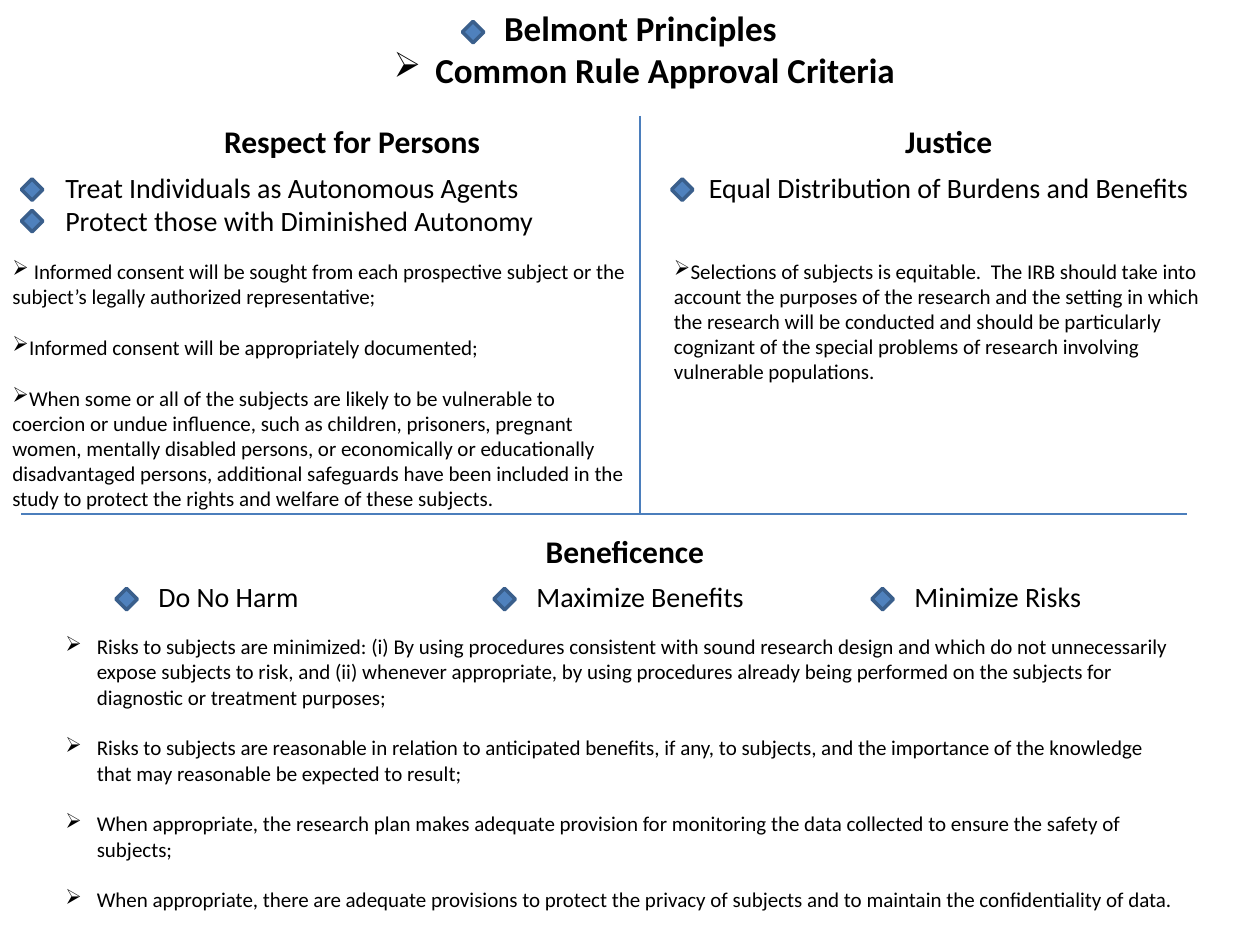
from lxml import etree
from pptx import Presentation
from pptx.dml.color import RGBColor
from pptx.enum.shapes import MSO_CONNECTOR, MSO_SHAPE
from pptx.enum.text import PP_ALIGN
from pptx.oxml.ns import qn
from pptx.util import Inches, Pt

CENTER, LEFT = PP_ALIGN.CENTER, PP_ALIGN.LEFT
DIAMOND, STRAIGHT = MSO_SHAPE.DIAMOND, MSO_CONNECTOR.STRAIGHT
BLACK, BLUE, DARK_BLUE, RULE_BLUE = "000000", "4F81BD", "3A5F8C", "4B7EBC"
FONT = "Calibri"
BLANK_LINE = 14.65  # height of one 12 pt line

RESPECT_CRITERIA = [
    " Informed consent will be sought from each prospective subject or the "
    "subject’s legally authorized representative;",
    "Informed consent will be appropriately documented;",
    "When some or all of the subjects are likely to be vulnerable to coercion "
    "or undue influence, such as children, prisoners, pregnant women, mentally "
    "disabled persons, or economically or educationally disadvantaged persons, "
    "additional safeguards have been included in the study to protect the "
    "rights and welfare of these subjects.",
]
JUSTICE_CRITERIA = [
    "Selections of subjects is equitable.  The IRB should take into account the "
    "purposes of the research and the setting in which the research will be "
    "conducted and should be particularly cognizant of the special problems of "
    "research involving vulnerable populations.",
]
BENEFICENCE_CRITERIA = [
    "Risks to subjects are minimized: (i) By using procedures consistent with "
    "sound research design and which do not unnecessarily expose subjects to "
    "risk, and (ii) whenever appropriate, by using procedures already being "
    "performed on the subjects for diagnostic or treatment purposes;",
    "Risks to subjects are reasonable in relation to anticipated benefits, if "
    "any, to subjects, and the importance of the knowledge that may reasonable "
    "be expected to result;",
    "When appropriate, the research plan makes adequate provision for "
    "monitoring the data collected to ensure the safety of subjects;",
    "When appropriate, there are adequate provisions to protect the privacy of "
    "subjects and to maintain the confidentiality of data.",
]


def color(value):
    return RGBColor.from_string(value)


def add_bullet(p, indent=0):
    """Give a paragraph an arrow bullet with a hanging indent in inches."""
    pPr = p._p.get_or_add_pPr()
    pPr.set("marL", str(Inches(indent)))
    pPr.set("indent", str(-Inches(indent)))
    etree.SubElement(pPr, qn("a:buChar")).set("char", "➢")


def add_tab_stops(p, stops):
    tab_list = etree.SubElement(p._p.get_or_add_pPr(), qn("a:tabLst"))
    for stop in stops:
        tab = etree.SubElement(tab_list, qn("a:tab"))
        tab.set("pos", str(Inches(stop)))
        tab.set("algn", "l")


def add_text_box(slide, x, y, w, h, wrap=True):
    tf = slide.shapes.add_textbox(Inches(x), Inches(y), Inches(w), Inches(h)).text_frame
    tf.word_wrap = wrap
    return tf


def add_paragraph(tf, text, size, bold=False, align=LEFT, before=0):
    p = tf.paragraphs[0]
    if p.text:
        p = tf.add_paragraph()
    p.text = text
    p.alignment = align
    if before:
        p.space_before = Pt(before)
    for r in p.runs:
        r.font.name, r.font.size, r.font.bold = FONT, Pt(size), bold
        r.font.color.rgb = color(BLACK)
    return p


def add_title(slide):
    tf = add_text_box(slide, 3, 0, 4.23, 0.77, wrap=False)
    add_paragraph(tf, "Belmont Principles ", 20, True, CENTER)
    add_bullet(add_paragraph(tf, "Common Rule Approval Criteria", 20, True, CENTER), 0.33)


def add_principle(slide, box, heading, items, align=LEFT, wrap=True):
    """Centred heading above its principles; returns the last paragraph."""
    tf = add_text_box(slide, *box, wrap=wrap)
    add_paragraph(tf, heading, 18, True, CENTER)
    for i, item in enumerate(items):
        p = add_paragraph(tf, item, 16, align=align, before=0 if i else 6)
    return p


def add_criteria(slide, box, criteria, indent=0):
    tf = add_text_box(slide, *box)
    for i, text in enumerate(criteria):
        p = add_paragraph(tf, text, 12, before=BLANK_LINE if i else 0)
        add_bullet(p, indent)


def add_diamond(slide, x, y):
    sp = slide.shapes.add_shape(DIAMOND, Inches(x), Inches(y), Inches(0.17), Inches(0.17))
    sp.shadow.inherit = False
    sp.fill.solid()
    sp.fill.fore_color.rgb = color(BLUE)
    sp.line.color.rgb = color(DARK_BLUE)
    sp.line.width = Pt(2)


def add_rule(slide, x1, y1, x2, y2):
    line = slide.shapes.add_connector(STRAIGHT, Inches(x1), Inches(y1), Inches(x2), Inches(y2))
    line.line.color.rgb = color(RULE_BLUE)
    line.line.width = Pt(0.75)
    etree.SubElement(line._element.spPr, qn("a:effectLst"))


def main():
    prs = Presentation()
    prs.slide_width, prs.slide_height = Inches(10), Inches(7.5)
    slide = prs.slides.add_slide(prs.slide_layouts[6])

    # Dividers between the three principles
    add_rule(slide, 0.17, 4.08, 9.42, 4.08)
    add_rule(slide, 5.08, 0.92, 5.08, 4.08)

    add_title(slide)

    # Respect for persons
    add_principle(slide, (0.42, 0.92, 4.75, 1.03), "Respect for Persons",
                  ["Treat Individuals as Autonomous Agents",
                   "Protect those with Diminished Autonomy"])
    add_criteria(slide, (0, 2, 5.08, 2.32), RESPECT_CRITERIA)

    # Justice
    add_principle(slide, (5.5, 0.92, 4.06, 0.76), "Justice",
                  ["Equal Distribution of Burdens and Benefits"], CENTER, wrap=False)
    add_criteria(slide, (5.25, 2, 4.5, 1.11), JUSTICE_CRITERIA)

    # Beneficence, with its principles in three columns
    p = add_principle(slide, (1.16, 4.17, 7.6, 0.76), "Beneficence",
                      ["Do No Harm\tMaximize Benefits\tMinimize Risks"])
    add_tab_stops(p, (3, 6))
    add_criteria(slide, (0.42, 4.98, 9, 2.32), BENEFICENCE_CRITERIA, 0.25)

    # Diamond markers: title, respect, justice, beneficence
    markers = [(3.67, 0.17), (0.17, 1.42), (0.17, 1.67), (5.33, 1.42)]
    markers += [(0.92 + 3 * i, 4.67) for i in range(3)]
    for x, y in markers:
        add_diamond(slide, x, y)

    prs.save("out.pptx")


if __name__ == "__main__":
    main()
